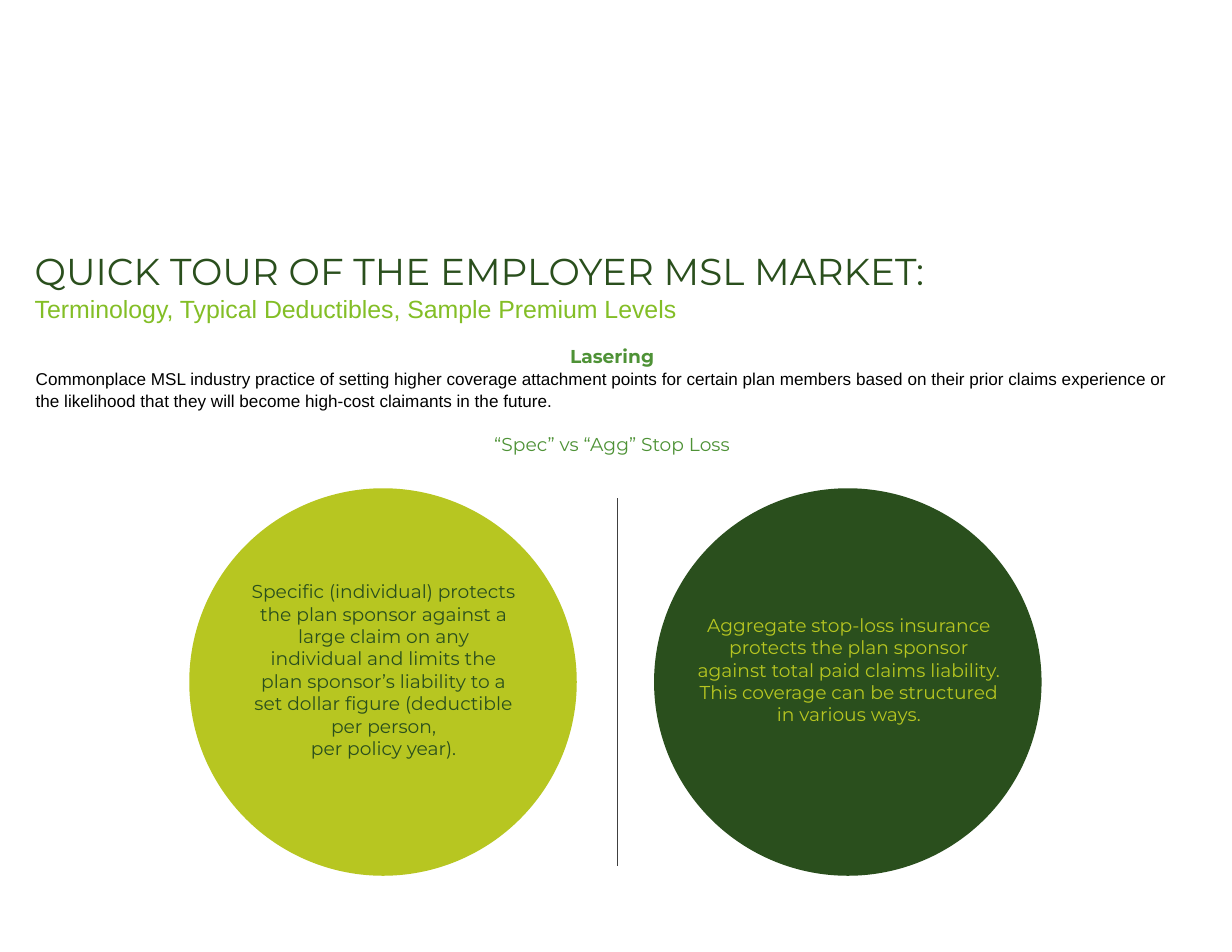
from lxml.etree import SubElement
from pptx import Presentation
from pptx.dml.color import RGBColor
from pptx.enum.shapes import MSO_CONNECTOR, MSO_SHAPE
from pptx.enum.text import MSO_ANCHOR, MSO_AUTO_SIZE, PP_ALIGN
from pptx.oxml.ns import qn
from pptx.util import Inches, Pt

DARK, LIME, LEAF, GRASS = "2A4F1D", "B7C621", "4E9236", "83BE26"
HEADING, BODY = "Montserrat", "Arial"
CIRCLE_TOP, CIRCLE_SIZE = 4.36, 3.46


def color(value):
    """Turn a hex string into a colour."""
    return RGBColor.from_string(value)


def prepare_frame(shape):
    """Give a text shape wrapping, top anchoring and a fixed size."""
    frame = shape.text_frame
    frame.word_wrap = True
    frame.auto_size = MSO_AUTO_SIZE.NONE
    frame.vertical_anchor = MSO_ANCHOR.TOP
    return frame


def add_text(frame, text, size=12, font=HEADING, fill=DARK, bold=False,
             align=PP_ALIGN.CENTER, before=0, spacing=1.0):
    """Write one formatted paragraph, using the empty first one if free."""
    first = frame.paragraphs[0]
    para = frame.add_paragraph() if first.runs else first
    para.alignment = align
    para.line_spacing = spacing
    if before:
        para.space_before = Pt(before)
    span = para.add_run()
    span.text = text
    span.font.size = Pt(size)
    span.font.name = font
    span.font.bold = bold
    span.font.color.rgb = color(fill)


def add_box(page, left, top, width, height):
    """Add a text box and return its text frame."""
    box = page.shapes.add_textbox(Inches(left), Inches(top), Inches(width), Inches(height))
    return prepare_frame(box)


def add_title(page):
    """Place and fill the title with its subtitle line."""
    title = page.shapes.title
    title.left, title.top = Inches(0.21), Inches(2.17)
    title.width, title.height = Inches(8.98), Inches(0.77)
    frame = prepare_frame(title)
    add_text(frame, "QUICK TOUR OF THE EMPLOYER MSL MARKET:", size=24, align=PP_ALIGN.LEFT)
    add_text(frame, "Terminology, Typical Deductibles, Sample Premium Levels",
             size=16, font=BODY, fill=GRASS, align=PP_ALIGN.LEFT)


def add_circle(page, left, fill):
    """Add a plain filled circle."""
    circle = page.shapes.add_shape(MSO_SHAPE.OVAL, Inches(left), Inches(CIRCLE_TOP),
                                   Inches(CIRCLE_SIZE), Inches(CIRCLE_SIZE))
    circle.shadow.inherit = False
    circle.fill.solid()
    circle.fill.fore_color.rgb = color(fill)
    circle.line.fill.background()


def add_divider(page, x, top, bottom):
    """Add a thin vertical line."""
    line = page.shapes.add_connector(MSO_CONNECTOR.STRAIGHT, Inches(x), Inches(top),
                                     Inches(x), Inches(bottom))
    line.line.color.rgb = color("404040")
    line.line.width = Pt(0.5)
    SubElement(line._element.spPr, qn("a:effectLst"))


def main():
    """Build the slide."""
    deck = Presentation()
    deck.slide_width, deck.slide_height = Inches(11), Inches(8.5)
    page = deck.slides.add_slide(deck.slide_layouts[5])
    add_title(page)

    terms = add_box(page, 0.22, 3.03, 10.49, 1.08)
    add_text(terms, "Lasering", fill=LEAF, bold=True)
    add_text(terms, "Commonplace MSL industry practice of setting higher coverage attachment "
             "points for certain plan members based on their prior claims experience or the "
             "likelihood that they will become high-cost claimants in the future.",
             size=11, font=BODY, fill="000000", align=PP_ALIGN.LEFT, spacing=1.07)
    add_text(terms, "“Spec” vs “Agg” Stop Loss", fill=LEAF, before=14)

    circles = [
        (1.69, LIME, DARK, (2.14, 5.13, 2.57, 1.92),
         ["Specific (individual) protects the plan sponsor against a large claim on any "
          "individual and limits the plan sponsor’s liability to a set dollar figure "
          "(deductible per person,", "per policy year)."]),
        (5.84, DARK, LIME, (6.1, 5.43, 2.96, 1.31),
         ["Aggregate stop-loss insurance protects the plan sponsor against total paid "
          "claims liability. This coverage can be structured in various ways."]),
    ]
    for left, fill, ink, place, lines in circles:
        add_circle(page, left, fill)
        frame = add_box(page, *place)
        for text in lines:
            add_text(frame, text, fill=ink)
    add_divider(page, 5.51, 4.45, 7.73)
    deck.save("out.pptx")


if __name__ == "__main__":
    main()
